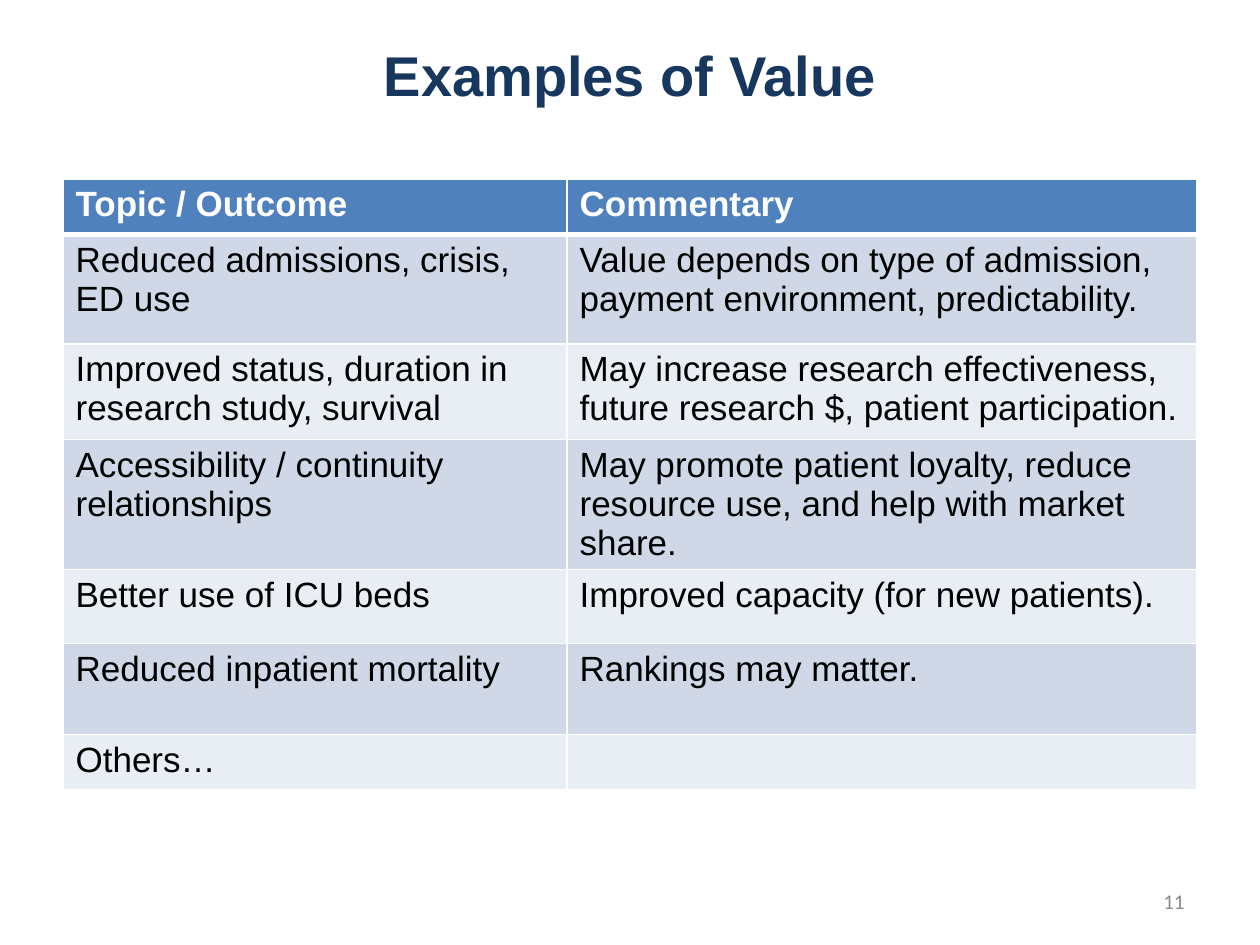
from lxml.etree import SubElement
from pptx import Presentation
from pptx.dml.color import RGBColor
from pptx.enum.text import MSO_ANCHOR, PP_ALIGN
from pptx.oxml.ns import qn
from pptx.util import Inches, Pt

HEADER_FILL = "4F81BD"
BAND_FILLS = ("D0D8E8", "E9EDF4")
COLUMN_WIDTHS = (4, 5)
ROW_HEIGHTS = (0.44, 0.87, 0.76, 1.03, 0.59, 0.72, 0.44)
ROWS = (
    ("Topic / Outcome", "Commentary"),
    ("Reduced admissions, crisis, ED use",
     "Value depends on type of admission, payment environment, predictability."),
    ("Improved status, duration in research study, survival",
     "May increase research effectiveness, future research $, patient participation."),
    ("Accessibility / continuity relationships",
     "May promote patient loyalty, reduce resource use, and help with market share."),
    ("Better use of ICU beds", "Improved capacity (for new patients)."),
    ("Reduced inpatient mortality", "Rankings may matter."),
    ("Others…", ""),
)


def color(value):
    return RGBColor.from_string(value)


def write(frame, text, size, ink, font="Arial", bold=False, align=PP_ALIGN.LEFT):
    para = frame.paragraphs[0]
    para.alignment = align
    para.font.size = Pt(size)
    if not text:
        return
    span = para.add_run()
    span.text = text
    span.font.size = Pt(size)
    span.font.name = font
    span.font.bold = bold
    span.font.color.rgb = color(ink)


def set_borders(cell, bottom_width):
    """Draw white cell borders; they must precede the fill in the XML."""
    properties = cell._tc.get_or_add_tcPr()
    for side, width in (("L", 1), ("R", 1), ("T", 1), ("B", bottom_width)):
        line = SubElement(properties, qn(f"a:ln{side}"), w=str(Pt(width)))
        fill = SubElement(line, qn("a:solidFill"))
        SubElement(fill, qn("a:srgbClr"), val="FFFFFF")


def add_title(page, text):
    title = page.shapes.title
    title.left, title.top = Inches(0.5), Inches(0.03)
    title.width, title.height = Inches(9), Inches(1.12)
    title.text_frame.vertical_anchor = MSO_ANCHOR.MIDDLE
    write(title.text_frame, text, 32, "17375E", bold=True, align=PP_ALIGN.CENTER)


def add_value_table(page):
    table = page.shapes.add_table(
        len(ROWS), len(COLUMN_WIDTHS), Inches(0.5), Inches(1.42),
        Inches(sum(COLUMN_WIDTHS)), Inches(sum(ROW_HEIGHTS))).table
    for column, width in zip(table.columns, COLUMN_WIDTHS):
        column.width = Inches(width)
    for index, (row, height, texts) in enumerate(zip(table.rows, ROW_HEIGHTS, ROWS)):
        row.height = Inches(height)
        header = index == 0
        for cell, text in zip(row.cells, texts):
            set_borders(cell, 3 if header else 1)
            cell.fill.solid()
            cell.fill.fore_color.rgb = color(
                HEADER_FILL if header else BAND_FILLS[(index - 1) % 2])
            write(cell.text_frame, text, 20,
                  "FFFFFF" if header else "000000", bold=header)


def add_page_number(page, number):
    box = page.shapes.add_textbox(Inches(7.17), Inches(6.95), Inches(2.33), Inches(0.4))
    box.text_frame.word_wrap = True
    box.text_frame.vertical_anchor = MSO_ANCHOR.MIDDLE
    write(box.text_frame, number, 12, "898989", font="Calibri", align=PP_ALIGN.RIGHT)


def main():
    deck = Presentation()
    deck.slide_width, deck.slide_height = Inches(10), Inches(7.5)
    page = deck.slides.add_slide(deck.slide_layouts[5])  # Title Only
    add_title(page, "Examples of Value")
    add_value_table(page)
    add_page_number(page, "11")
    deck.save("out.pptx")


if __name__ == "__main__":
    main()
